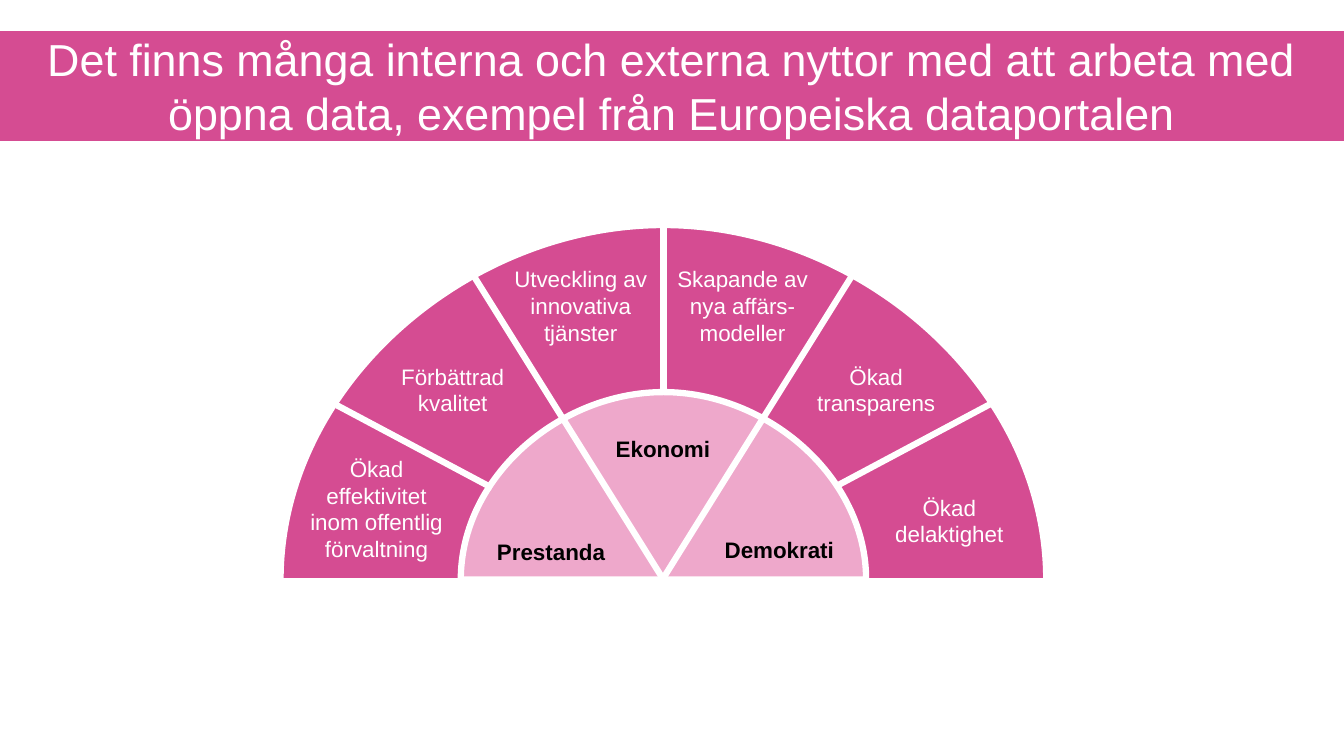
from pptx import Presentation
from pptx.dml.color import RGBColor as RGB
from pptx.enum.shapes import MSO_CONNECTOR as LINE, MSO_SHAPE as SHAPE
from pptx.enum.text import MSO_ANCHOR as ANCHOR, PP_ALIGN as ALIGN
from pptx.oxml.ns import qn
from pptx.util import Inches, Pt
from lxml import etree

INK = {"pink": "C40064", "pale": "FEDEED", "white": "FFFFFF", "black": "000000"}

deck = Presentation()
deck.slide_width, deck.slide_height = Inches(13.33), Inches(7.5)
slide = deck.slides.add_slide(deck.slide_layouts[6])
shapes = slide.shapes


def paint(shape, fill, alpha, width):
    shape.shadow.inherit = False
    shape.fill.solid()
    shape.fill.fore_color.rgb = RGB.from_string(INK[fill])
    tint = shape._element.spPr.find(qn("a:solidFill"))[0]
    etree.SubElement(tint, qn("a:alpha")).set("val", str(alpha * 1000))
    shape.line.color.rgb = RGB.from_string(INK["white"])
    shape.line.width = Pt(width)


def write(text, box, size=16, color="white", bold=False, inset=0):
    frame = box.text_frame
    frame.word_wrap = True
    frame.vertical_anchor = ANCHOR.MIDDLE
    frame.margin_left = frame.margin_right = Inches(inset)
    frame.margin_top = frame.margin_bottom = 0
    para = frame.paragraphs[0]
    para.alignment = ALIGN.CENTER
    run = para.add_run()
    run.text = text
    run.font.name, run.font.size, run.font.bold = "Arial", Pt(size), bold
    run.font.color.rgb = RGB.from_string(INK[color])


mid, base = 6.58, 5.75
for wide, high, fill, alpha, width in [
    (3.78, 3.5, "pink", 70, 2),
    (2.01, 1.86, "pale", 63, 4.5),
]:
    ratios = [(-1, 0), (-1, 0.55), (-0.51, 1), (0, 1), (0.51, 1), (1, 0.55), (1, 0)]
    ratios += [(0, 0), (-1, 0)]
    dome = [(Inches(mid + x * wide), Inches(base - y * high)) for x, y in ratios]
    form = shapes.build_freeform(*dome[0])
    form.add_line_segments(dome[1:], close=True)
    shape = form.convert_to_shape()
    lines = list(shape._element.iter(qn("a:lnTo")))
    for first in (0, 3):
        curve = etree.Element(qn("a:cubicBezTo"))
        lines[first].addprevious(curve)
        for part in lines[first:first + 3]:
            curve.append(part[0])
            part.getparent().remove(part)
    paint(shape, fill, alpha, width)

for spoke in [
    (6.58, 2.25, 6.58, 3.89),
    (8.46, 2.72, 6.57, 5.75),
    (9.82, 4.01, 8.3, 4.82),
    (4.7, 2.74, 6.58, 5.75),
    (3.34, 4.02, 4.88, 4.84),
]:
    line = shapes.add_connector(LINE.STRAIGHT, *map(Inches, spoke))
    line.line.color.rgb = RGB.from_string(INK["white"])
    line.line.width = Pt(4.5)
    etree.SubElement(line._element.spPr, qn("a:effectLst"))

themes = [
    ("Prestanda", 4.69, 5.26, 1.55, 0.43),
    ("Demokrati", 7, 5.27, 1.46, 0.37),
    ("Ekonomi", 5.91, 4.24, 1.33, 0.42),
]
gains = [
    ("Ökad effektivitet inom offentlig förvaltning", 3.07, 4.51, 1.33, 1.07),
    ("Ökad delaktighet", 8.67, 4.75, 1.49, 0.83),
    ("Förbättrad kvalitet", 3.79, 3.45, 1.4, 0.83),
    ("Ökad transparens", 7.92, 3.45, 1.54, 0.83),
    ("Utveckling av innovativa tjänster", 5.01, 2.62, 1.5, 0.83),
    ("Skapande av nya affärs-modeller", 6.7, 2.62, 1.33, 0.83),
]
for labels, color, bold in [(themes, "black", True), (gains, "white", False)]:
    for text, *place in labels:
        box = shapes.add_textbox(*map(Inches, place))
        write(text, box, color=color, bold=bold)

banner = shapes.add_shape(SHAPE.RECTANGLE, *map(Inches, (-0.22, 0.29, 13.77, 1.12)))
paint(banner, "pink", 70, 2)
title = (
    "Det finns många interna och externa nyttor med att arbeta med "
    "öppna data, exempel från Europeiska dataportalen"
)
write(title, banner, size=32, inset=0.55)

deck.save("out.pptx")
